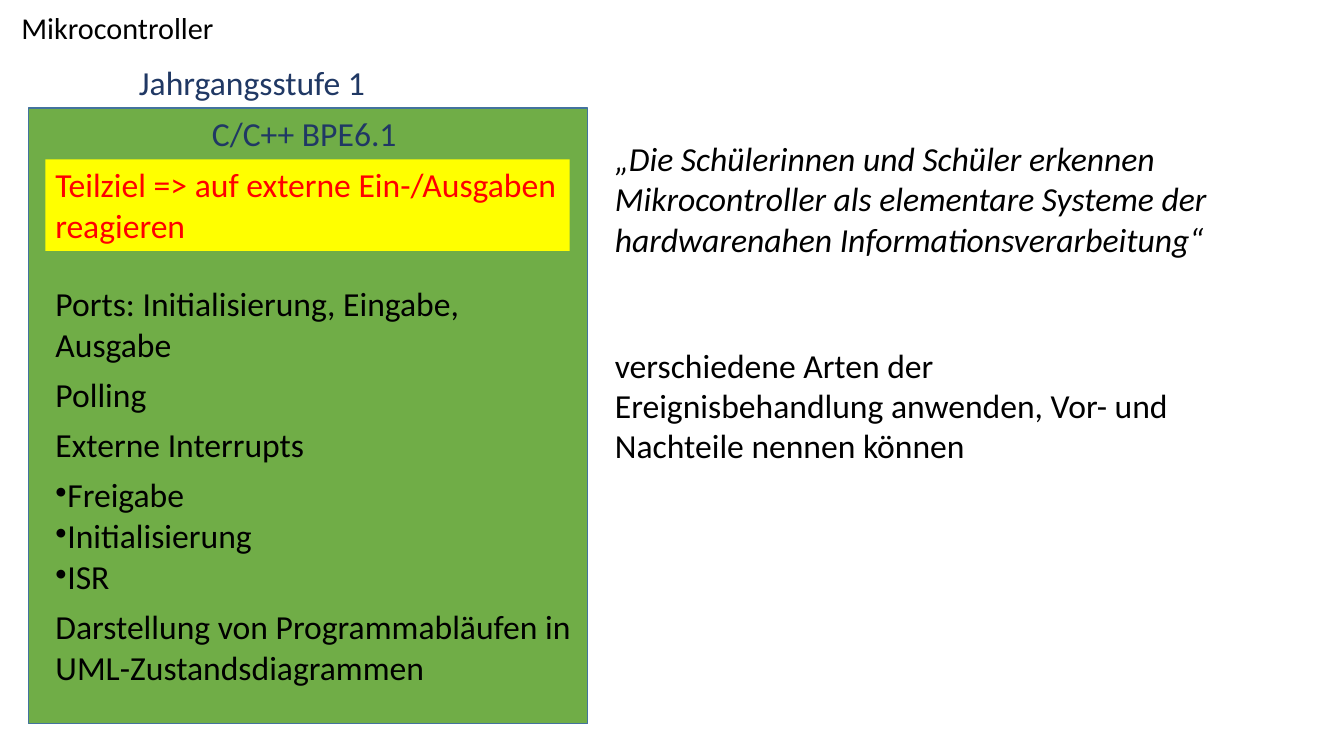
from pptx import Presentation
from pptx import util as u
from pptx.dml.color import RGBColor
from pptx.enum import shapes, text
from pptx.oxml import ns
from lxml import etree

PX = u.Inches(1) // 100
FONT = "Calibri"
BLACK = RGBColor(0x00, 0x00, 0x00)
NAVY = RGBColor(0x20, 0x38, 0x64)
RED = RGBColor(0xFF, 0x00, 0x00)
YELLOW = RGBColor(0xFF, 0xFF, 0x00)
GREEN = RGBColor(0x70, 0xAD, 0x47)
BLUE = RGBColor(0x43, 0x73, 0x9E)
NO_STYLE = "{2D5ABB26-0587-4C30-8999-92F81FD0307C}"

TOPICS = [
    (90, "Ports: Initialisierung, Eingabe, Ausgabe"),
    (50, "Polling"),
    (50, "Externe Interrupts"),
    (130, "Freigabe\nInitialisierung\nISR"),
    (90, "Darstellung von Programmabläufen in UML-Zustandsdiagrammen"),
]


def box(*lengths):
    return [n * PX for n in lengths]


def format_run(r, color, size=24, italic=None):
    r.font.name = FONT
    r.font.size = u.Pt(size)
    r.font.color.rgb = color
    r.font.italic = italic


def fill_text(tf, words, color, align=text.PP_ALIGN.LEFT, italic=None):
    tf.text = words
    for p in tf.paragraphs:
        p.alignment = align
        for r in p.runs:
            format_run(r, color, italic=italic)


def add_title(s, words):
    title = s.shapes.title
    title.left, title.top, title.width, title.height = box(0, 0, 250, 60)
    tf = title.text_frame
    tf.auto_size = text.MSO_AUTO_SIZE.NONE
    tf.vertical_anchor = text.MSO_ANCHOR.BOTTOM
    p = tf.paragraphs[0]
    p.text = words
    p.alignment = text.PP_ALIGN.CENTER
    p.line_spacing = 0.9
    format_run(p.runs[0], BLACK, 21.6)
    r = p.add_run()
    r.text = " "
    format_run(r, BLACK, 54)


def add_panel(s, place, words, color, fill, line=None, align=text.PP_ALIGN.LEFT):
    sp = s.shapes.add_shape(shapes.MSO_SHAPE.RECTANGLE, *box(*place))
    sp.shadow.inherit = False
    sp.fill.solid()
    sp.fill.fore_color.rgb = fill
    if line is None:
        sp.line.fill.background()
    else:
        sp.line.color.rgb = line
        sp.line.width = u.Pt(1)
    tf = sp.text_frame
    tf.word_wrap = True
    tf.vertical_anchor = text.MSO_ANCHOR.TOP
    fill_text(tf, words, color, align)


def add_label(s, place, words, color, wrap=True, align=text.PP_ALIGN.LEFT, italic=None):
    tf = s.shapes.add_textbox(*box(*place)).text_frame
    tf.word_wrap = wrap
    tf.auto_size = text.MSO_AUTO_SIZE.SHAPE_TO_FIT_TEXT
    fill_text(tf, words, color, align, italic)


def add_bullet(p):
    bullet = etree.SubElement(p._p.get_or_add_pPr(), ns.qn("a:buChar"))
    bullet.set("char", "•")


def add_topics(s, left, top, width):
    height = sum(h for h, _ in TOPICS)
    frame = s.shapes.add_table(len(TOPICS), 1, *box(left, top, width, height))
    table = frame.table
    table.first_row = table.horz_banding = False
    table._tbl.tblPr.find(ns.qn("a:tableStyleId")).text = NO_STYLE
    for row, (h, words) in zip(table.rows, TOPICS):
        row.height = h * PX
        cell = row.cells[0]
        cell.fill.background()
        cell.margin_top = cell.margin_bottom = 4 * PX
        cell.vertical_anchor = text.MSO_ANCHOR.MIDDLE
        fill_text(cell.text_frame, words, BLACK)
        if "\n" in words:
            for p in cell.text_frame.paragraphs:
                add_bullet(p)


def main():
    prs = Presentation()
    prs.slide_width, prs.slide_height = box(1333, 750)
    s = prs.slides.add_slide(prs.slide_layouts[0])
    subtitle = s.placeholders[1]._element
    subtitle.getparent().remove(subtitle)

    center = text.PP_ALIGN.CENTER
    add_title(s, "Mikrocontroller")
    add_panel(s, (28, 107, 555, 611), "C/C++ BPE6.1 ", NAVY, GREEN, BLUE, center)
    add_label(s, (127, 57, 246, 50), "Jahrgangsstufe 1", NAVY, wrap=False, align=center)
    add_panel(s, (45, 158, 520, 91),
              "Teilziel => auf externe Ein-/Ausgaben reagieren", RED, YELLOW)
    add_label(s, (600, 132, 721, 131),
              "„Die Schülerinnen und Schüler erkennen Mikrocontroller als elementare "
              "Systeme der hardwarenahen Informationsverarbeitung“", BLACK, italic=True)
    add_label(s, (600, 337, 592, 131),
              "verschiedene Arten der Ereignisbehandlung anwenden, "
              "Vor- und Nachteile nennen können", BLACK)
    add_topics(s, 45, 278, 537)
    prs.save("out.pptx")


if __name__ == "__main__":
    main()
